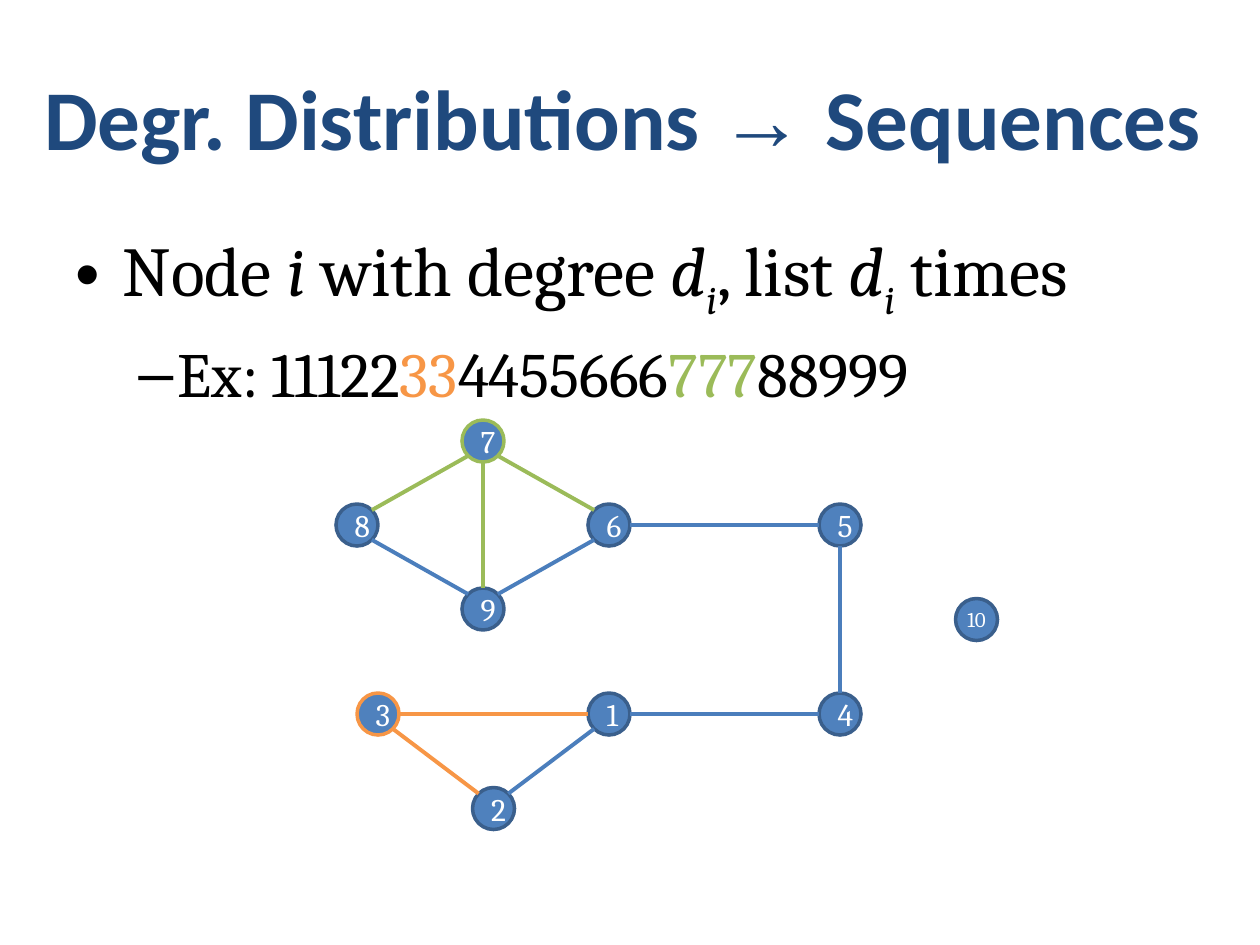
"""Build a slide on degree sequences, with a bulleted example and its graph."""
from math import sqrt
from pptx import Presentation
from pptx.dml import color
from pptx.enum import shapes, text
from pptx.oxml import ns
from pptx import util as u
from lxml import etree


def rgb(value):
    return color.RGBColor.from_string(value)


def add_span(para, words, font, size, ink, bold=False, italic=False, baseline=0):
    span = para.add_run()
    span.text = words
    span.font.name, span.font.size = font, u.Pt(size)
    span.font.bold, span.font.italic = bold, italic
    span.font.color.rgb = rgb(ink)
    if baseline:
        span.font._element.set("baseline", str(baseline * 1000))


BLACK, NAVY, WHITE = "000000", "1F497D", "FFFFFF"
ORANGE, GREEN = "F79646", "9BBB59"
NODE_FILL, NODE_LINE, EDGE = "4F81BD", "3A5F8C", "4B7EBC"
RADIUS = 12

deck = Presentation()
deck.slide_width, deck.slide_height = u.Pt(720), u.Pt(540)
page = deck.slides.add_slide(deck.slide_layouts[5])

title = page.shapes.title
title.left, title.top, title.width, title.height = map(u.Pt, (18, 21.6, 684, 90))
frame = title.text_frame
frame.auto_size = text.MSO_AUTO_SIZE.NONE
frame.vertical_anchor = text.MSO_ANCHOR.MIDDLE
para = frame.paragraphs[0]
para.alignment = text.PP_ALIGN.LEFT
for words, font in (("Degr. Distributions ", "Calibri"), ("→ ", "Times New Roman"),
                    ("Sequences", "Calibri")):
    add_span(para, words, font, 48.6, NAVY, bold=True)

rule = [("Node ", BLACK, False, 0), ("i ", BLACK, True, 0),
        ("with degree ", BLACK, False, 0), ("d", BLACK, True, 0),
        ("i", BLACK, True, -25), (", list ", BLACK, False, 0),
        ("d", BLACK, True, 0), ("i", BLACK, True, -25), (" times", BLACK, False, 0)]
example = [("Ex: 11122", BLACK, False, 0), ("33", ORANGE, False, 0),
           ("4455666", BLACK, False, 0), ("777", GREEN, False, 0),
           ("88999", BLACK, False, 0)]
box = page.shapes.add_textbox(*map(u.Pt, (36, 126, 648, 356.4)))
frame = box.text_frame
frame.word_wrap = True
paragraphs = [(frame.paragraphs[0], 0, "•", 40, 27, 27, rule),
              (frame.add_paragraph(), 1, "–", 36, 58.5, 22.5, example)]
for para, level, bullet, size, margin, hanging, spans in paragraphs:
    para.level = level
    para.space_before = u.Pt(size * 0.2)
    properties = para._p.get_or_add_pPr()
    properties.set("marL", str(u.Pt(margin)))
    properties.set("indent", str(-u.Pt(hanging)))
    etree.SubElement(properties, ns.qn("a:buFont"), typeface="Arial")
    etree.SubElement(properties, ns.qn("a:buChar"), char=bullet)
    for words, ink, italic, baseline in spans:
        add_span(para, words, "Cambria", size, ink, italic=italic, baseline=baseline)

centers = {8: (204, 300), 6: (348, 300), 7: (276, 252), 9: (276, 348), 5: (480, 300),
           10: (558, 354), 4: (480, 408), 1: (348, 408), 3: (216, 408), 2: (282, 462)}
highlights = {3: ORANGE, 7: GREEN}
for number, (x, y) in centers.items():
    node = page.shapes.add_shape(
        shapes.MSO_SHAPE.OVAL, *map(u.Pt, (x - RADIUS, y - RADIUS, 2 * RADIUS, 2 * RADIUS)))
    node.shadow.inherit = False
    node.fill.solid()
    node.fill.fore_color.rgb = rgb(NODE_FILL)
    node.line.color.rgb = rgb(highlights.get(number, NODE_LINE))
    node.line.width = u.Pt(2)
    frame = node.text_frame
    frame.vertical_anchor = text.MSO_ANCHOR.MIDDLE
    if number > 9:
        frame.margin_left = frame.margin_top = frame.margin_right = frame.margin_bottom = 0
    para = frame.paragraphs[0]
    para.alignment = text.PP_ALIGN.CENTER
    add_span(para, str(number), "Cambria", 12 if number > 9 else 18, WHITE)

edges = [(8, 7), (7, 6), (9, 8), (2, 1), (9, 7), (9, 6),
         (2, 3), (6, 5), (5, 4), (1, 4), (3, 1)]
for start, end in edges:
    (x1, y1), (x2, y2) = centers[start], centers[end]
    across, down = (x2 > x1) - (x2 < x1), (y2 > y1) - (y2 < y1)
    reach = RADIUS / sqrt(across ** 2 + down ** 2)
    dx, dy = across * reach, down * reach
    edge = page.shapes.add_connector(
        shapes.MSO_CONNECTOR.STRAIGHT, *map(u.Pt, (x1 + dx, y1 + dy, x2 - dx, y2 - dy)))
    edge.line.color.rgb = rgb(highlights.get(start, highlights.get(end, EDGE)))
    edge.line.width = u.Pt(2.25)
    etree.SubElement(edge._element.spPr, ns.qn("a:effectLst"))

deck.save("out.pptx")
